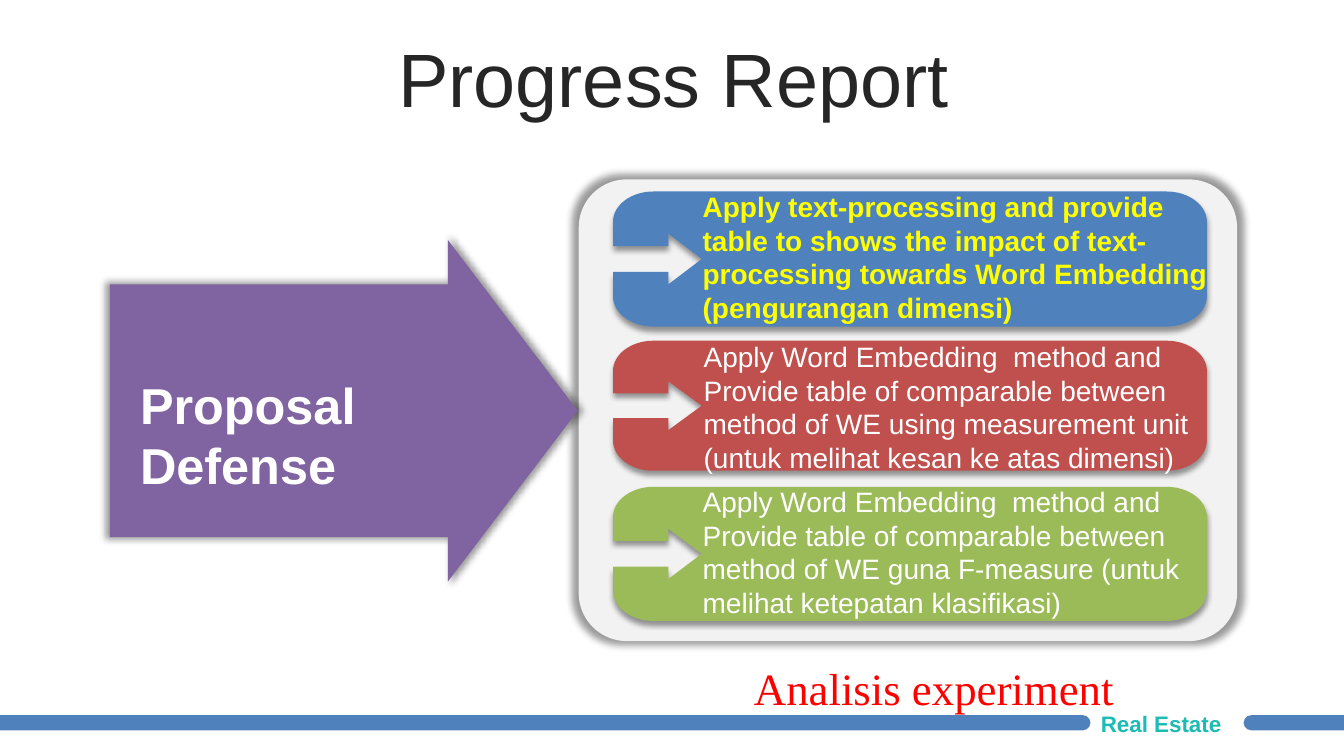
"""Build the Progress Report slide: an arrow leading to three task cards."""
from lxml.etree import SubElement
from pptx import Presentation
from pptx.dml.color import RGBColor
from pptx.enum.shapes import MSO_SHAPE as SHAPE
from pptx.enum.text import MSO_ANCHOR as ANCHOR, PP_ALIGN as ALIGN
from pptx.oxml.ns import qn
from pptx.util import Pt

PX = 9144
BLUE = RGBColor(0x4F, 0x81, 0xBD)
RED = RGBColor(0xC0, 0x50, 0x4D)
GREEN = RGBColor(0x9B, 0xBB, 0x59)
PURPLE = RGBColor(0x80, 0x64, 0xA2)
PANEL = RGBColor(0xF2, 0xF2, 0xF2)
WHITE = RGBColor(0xFF, 0xFF, 0xFF)
YELLOW = RGBColor(0xFF, 0xFF, 0x00)
INK = RGBColor(0x26, 0x26, 0x26)
TEAL = RGBColor(0x1C, 0xBB, 0xB4)
BRIGHT_RED = RGBColor(0xFF, 0x00, 0x00)

CARD_LEFT, CARD_RIGHT = 608, 1197
CORNER_W, CORNER_H = 40, 30
CURVE = 0.45
NOTCH_NECK, NOTCH_TIP = 663, 696
CURVE_STARTS = (1, 5, 9, 20)
GLOW = {"blur": 5, "dist": 0, "angle": 0, "scale": 102}
DROP = {"blur": 4, "dist": 3, "angle": 90, "scale": 100}

CARDS = [
    (190, 134, BLUE),
    (338, 129, RED),
    (483, 133, GREEN),
]
BARS = [
    ((533, 176, 15, 1082), 90),
    ((1276, 667, 15, 100), 270),
]
CARD_TEXTS = [
    ((687, 183, 522, 143), YELLOW, True,
     "Apply text-processing and provide table to shows the impact of "
     "text-processing towards Word Embedding (pengurangan dimensi)"),
    ((688, 332, 511, 143), WHITE, False,
     "Apply Word Embedding  method and Provide table of comparable between "
     "method of WE using measurement unit (untuk melihat kesan ke atas dimensi)"),
    ((687, 476, 522, 143), WHITE, False,
     "Apply Word Embedding  method and Provide table of comparable between "
     "method of WE guna F-measure (untuk melihat ketepatan klasifikasi)"),
]


def paint(sp, color, shadow=None):
    sp.fill.solid()
    sp.fill.fore_color.rgb = color
    sp.line.fill.background()
    sp.shadow.inherit = False
    if shadow:
        effects = sp._element.spPr.find(qn("a:effectLst"))
        scale = str(shadow["scale"] * 1000)
        outer = SubElement(effects, qn("a:outerShdw"), sx=scale, sy=scale,
                           blurRad=str(Pt(shadow["blur"])),
                           dist=str(Pt(shadow["dist"])),
                           dir=str(shadow["angle"] * 60000),
                           algn="ctr", rotWithShape="0")
        black = SubElement(outer, qn("a:srgbClr"), val="000000")
        SubElement(black, qn("a:alpha"), val="40000")


def add_preset(slide, kind, box, color, adjustments, shadow=None):
    sp = slide.shapes.add_shape(kind, *(v * PX for v in box))
    for i, value in enumerate(adjustments):
        sp.adjustments[i] = value
    paint(sp, color, shadow)
    return sp


def add_text(slide, box, text, size, color, bold=False, font="Arial",
             align=ALIGN.LEFT, anchor=ANCHOR.TOP):
    tf = slide.shapes.add_textbox(*(v * PX for v in box)).text_frame
    tf.word_wrap = True
    tf.vertical_anchor = anchor
    tf.text = text
    p = tf.paragraphs[0]
    p.alignment = align
    f = p.runs[0].font
    f.name, f.size, f.bold = font, Pt(size), bold
    f.color.rgb = color


def card_outline(top, height):
    bottom, mid = top + height, top + height / 2
    neck, head = height * 0.095, height * 0.187
    left, right = CARD_LEFT + CORNER_W, CARD_RIGHT - CORNER_W
    upper, lower = top + CORNER_H, bottom - CORNER_H
    dx, dy = CORNER_W * CURVE, CORNER_H * CURVE
    return [
        (left, top), (right, top),
        (CARD_RIGHT - dx, top), (CARD_RIGHT, top + dy), (CARD_RIGHT, upper),
        (CARD_RIGHT, lower),
        (CARD_RIGHT, bottom - dy), (CARD_RIGHT - dx, bottom), (right, bottom),
        (left, bottom),
        (CARD_LEFT + dx, bottom), (CARD_LEFT, bottom - dy), (CARD_LEFT, lower),
        (CARD_LEFT, mid + neck), (NOTCH_NECK, mid + neck),
        (NOTCH_NECK, mid + head), (NOTCH_TIP, mid), (NOTCH_NECK, mid - head),
        (NOTCH_NECK, mid - neck), (CARD_LEFT, mid - neck),
        (CARD_LEFT, upper),
        (CARD_LEFT, top + dy), (CARD_LEFT + dx, top), (left, top),
    ]


def add_card(slide, top, height, color):
    points = [(x * PX, y * PX) for x, y in card_outline(top, height)]
    builder = slide.shapes.build_freeform(*points[0])
    builder.add_line_segments(points[1:], close=True)
    sp = builder.convert_to_shape()
    lines = list(sp._element.iter(qn("a:lnTo")))
    for start in CURVE_STARTS:
        corner = lines[start:start + 3]
        curve = corner[0].makeelement(qn("a:cubicBezTo"))
        corner[0].addprevious(curve)
        for line in corner:
            curve.append(line[0])
            line.getparent().remove(line)
    paint(sp, color, DROP)


def main():
    prs = Presentation()
    prs.slide_width, prs.slide_height = 1333 * PX, 750 * PX
    s = prs.slides.add_slide(prs.slide_layouts[6])

    for box, turn in BARS:
        bar = add_preset(s, SHAPE.ROUND_2_SAME_RECTANGLE, box, BLUE, (0.5, 0))
        bar.rotation = turn
    add_text(s, (1082, 699, 151, 37), "Real Estate", 16, TEAL, True,
             anchor=ANCHOR.MIDDLE)
    add_text(s, (35, 37, 1266, 79), "Progress Report", 54, INK,
             align=ALIGN.CENTER, anchor=ANCHOR.MIDDLE)

    add_preset(s, SHAPE.ROUNDED_RECTANGLE, (574, 178, 653, 458), PANEL,
               (0.104,), GLOW)
    for card in CARDS:
        add_card(s, *card)
    for box, color, bold, text in CARD_TEXTS:
        add_text(s, box, text, 20, color, bold)

    add_preset(s, SHAPE.RIGHT_ARROW, (109, 238, 464, 339), PURPLE,
               (0.74, 0.38), GLOW)
    add_text(s, (129, 366, 411, 130), "Proposal Defense", 36, WHITE, True)
    add_text(s, (738, 651, 397, 64), "Analisis experiment", 32, BRIGHT_RED,
             font="Times New Roman")
    prs.save("out.pptx")


if __name__ == "__main__":
    main()
